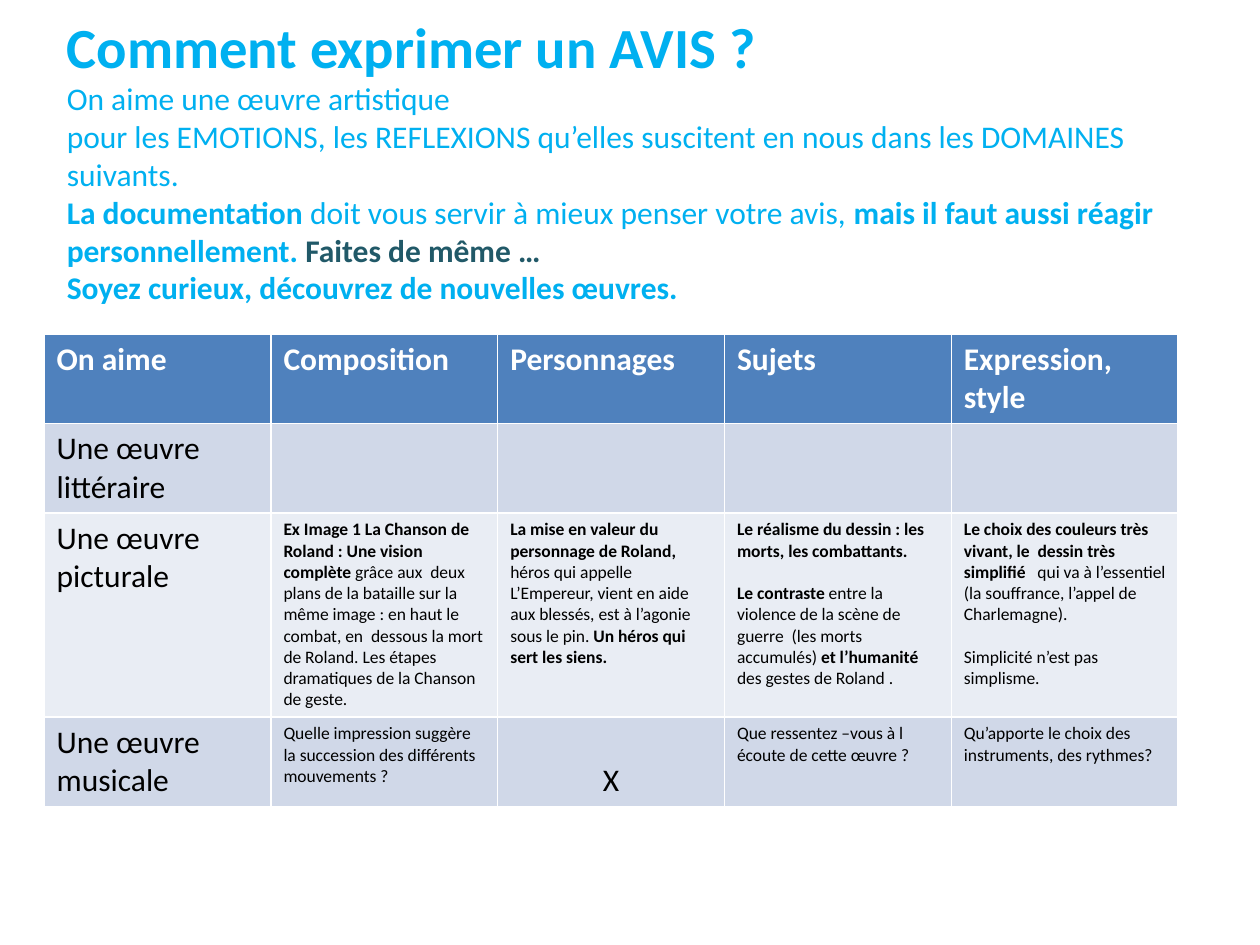
from pptx import Presentation
from pptx import util as u
from pptx.dml.color import RGBColor
from pptx.enum import text

COLORS = {"sky": "00B0F0", "teal": "215968", "header": "4F81BD",
          "dark_band": "D0D8E8", "light_band": "E9EDF4",
          "white": "FFFFFF", "black": "000000"}
FONT = "Calibri"
LARGE, SMALL = 18, 10

# Title: one list of runs per line, each run a text and its format
BOLD = {"bold": True}
TITLE = [
    [("Comment exprimer un AVIS ?", {"bold": True, "size": 32.4})],
    [("On aime une œuvre artistique", {})],
    [("pour les EMOTIONS, les REFLEXIONS qu’elles suscitent en nous "
      "dans les DOMAINES suivants.", {})],
    [("La documentation ", BOLD),
     ("doit vous servir à mieux penser votre avis, ", {}),
     ("mais il faut aussi réagir personnellement. ", BOLD),
     ("Faites de même …", {"bold": True, "color": "teal"})],
    [("Soyez curieux, découvrez de nouvelles œuvres.", BOLD)],
]

# Table: each cell is a list of paragraphs, each paragraph a list of runs
HEADERS = ["On aime", "Composition", "Personnages", "Sujets", "Expression, style"]
ROWS = [
    ("Une œuvre littéraire", [[], [], [], []]),
    ("Une œuvre picturale", [
        [[("Ex Image 1 La Chanson de Roland : Une vision complète ", BOLD),
          ("grâce aux  deux plans de la bataille sur la même image : en haut le "
           "combat, en  dessous la mort de Roland. Les étapes dramatiques de la "
           "Chanson de geste.", {})]],
        [[("La mise en valeur du personnage de Roland, ", BOLD),
          ("héros qui appelle L’Empereur, vient en aide aux blessés, est à "
           "l’agonie sous le pin. ", {}),
          ("Un héros qui sert les siens.", BOLD)]],
        [[("Le réalisme du dessin : les morts, les combattants.", BOLD)],
         [("Le contraste", BOLD),
          (" entre la violence de la scène de guerre  (les morts accumulés) ", {}),
          ("et l’humanité ", BOLD),
          ("des gestes de Roland .", {})]],
        [[("Le choix des couleurs très vivant, le  dessin très simplifié   ", BOLD),
          ("qui va à l’essentiel (la souffrance, l’appel de Charlemagne).", {})],
         [("Simplicité n’est pas simplisme.", {})]],
    ]),
    ("Une œuvre musicale", [
        [[("Quelle impression suggère la succession des différents mouvements ?", {})]],
        [[("X", {"size": LARGE})]],
        [[("Que ressentez –vous à l écoute de cette œuvre ?", {})]],
        [[("Qu’apporte le choix des instruments, des rythmes?", {})]],
    ]),
]
COLUMN_WIDTH = 1.8
ROW_HEIGHTS = [0.7, 0.71, 1.62, 0.7]
PARAGRAPH_GAP = 12.2


def add_run(paragraph, words, size=LARGE, bold=False, color="black"):
    run = paragraph.add_run()
    run.text = words
    run.font.name = FONT
    run.font.size = u.Pt(size)
    run.font.bold = bold
    run.font.color.rgb = RGBColor.from_string(COLORS[color])


def fill_frame(frame, paragraphs, gap=0, align=text.PP_ALIGN.LEFT, **defaults):
    for index, runs in enumerate(paragraphs):
        paragraph = frame.add_paragraph() if index else frame.paragraphs[0]
        paragraph.alignment = align
        paragraph.space_before = u.Pt(gap if index else 0)
        for words, style in runs:
            add_run(paragraph, words, **{**defaults, **style})


def fill_cell(cell, paragraphs, fill, **defaults):
    cell.fill.solid()
    cell.fill.fore_color.rgb = RGBColor.from_string(COLORS[fill])
    fill_frame(cell.text_frame, paragraphs, **defaults)


presentation = Presentation()
presentation.slide_width, presentation.slide_height = u.Inches(10), u.Inches(7.5)
slide = presentation.slides.add_slide(presentation.slide_layouts[5])

# Title placeholder
title = slide.shapes.title
title.left, title.top = u.Inches(0.43), u.Inches(0.29)
title.width, title.height = u.Inches(9), u.Inches(1.89)
frame = title.text_frame
frame.word_wrap = True
frame.auto_size = text.MSO_AUTO_SIZE.NONE
frame.vertical_anchor = text.MSO_ANCHOR.MIDDLE
frame.margin_top = u.Inches(0.1)
fill_frame(frame, TITLE, color="sky")

# Table grid
table = slide.shapes.add_table(
    len(ROW_HEIGHTS), len(HEADERS), u.Inches(0.35), u.Inches(2.65),
    u.Inches(COLUMN_WIDTH * len(HEADERS)), u.Inches(sum(ROW_HEIGHTS))).table
for column in table.columns:
    column.width = u.Inches(COLUMN_WIDTH)
for row, height in zip(table.rows, ROW_HEIGHTS):
    row.height = u.Inches(height)

# Header row
for column, header in enumerate(HEADERS):
    fill_cell(table.cell(0, column), [[(header, BOLD)]], "header", color="white")

# Body rows, in alternating bands
for row, (label, cells) in enumerate(ROWS, 1):
    band = "dark_band" if row % 2 else "light_band"
    fill_cell(table.cell(row, 0), [[(label, {})]], band)
    for column, paragraphs in enumerate(cells, 1):
        fill_cell(table.cell(row, column), paragraphs, band,
                  gap=PARAGRAPH_GAP, size=SMALL)

# The cross sits at the bottom centre of its cell
cross = table.cell(3, 2)
cross.vertical_anchor = text.MSO_ANCHOR.BOTTOM
cross.text_frame.paragraphs[0].alignment = text.PP_ALIGN.CENTER

presentation.save("out.pptx")
